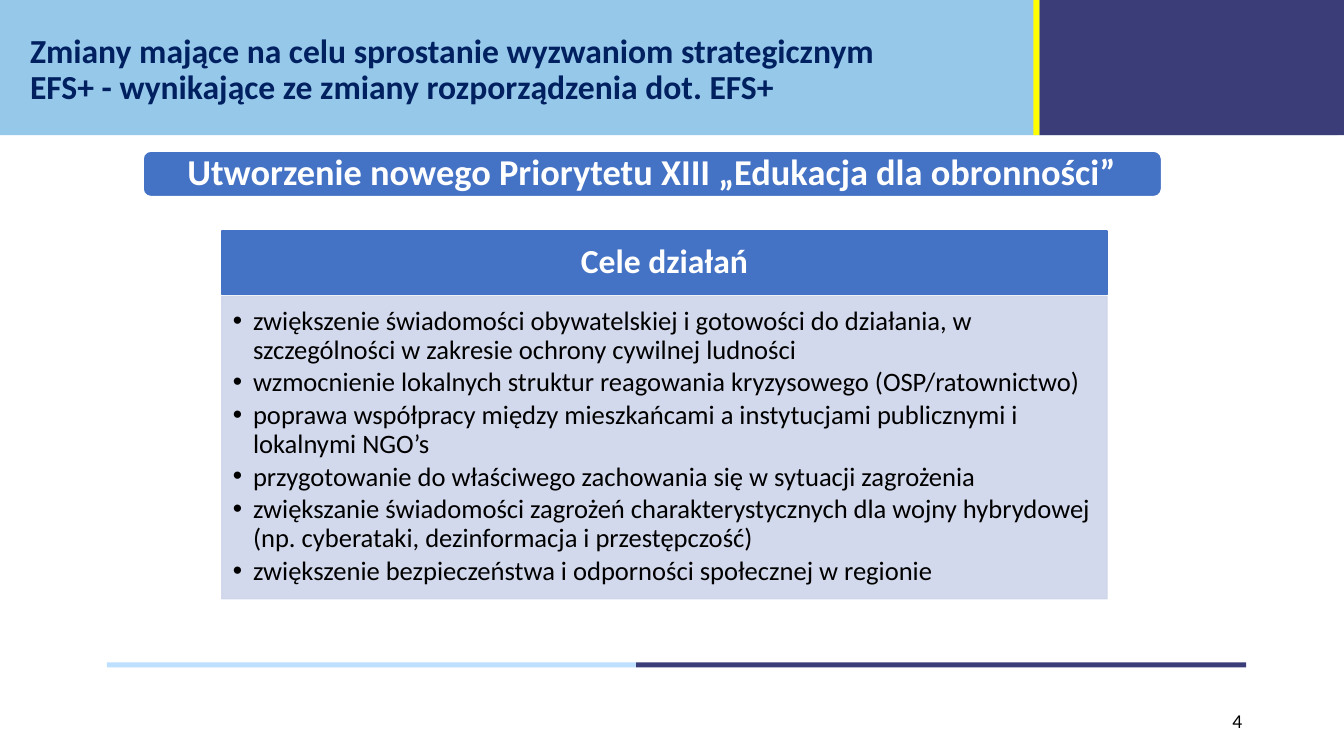
from lxml import etree
from pptx import Presentation
from pptx.dml.color import RGBColor
from pptx.enum.shapes import MSO_SHAPE
from pptx.enum.text import MSO_ANCHOR, PP_ALIGN
from pptx.oxml.ns import qn
from pptx.util import Pt

RECT, ROUND = MSO_SHAPE.RECTANGLE, MSO_SHAPE.ROUNDED_RECTANGLE
LEFT, MID, RIGHT = PP_ALIGN.LEFT, PP_ALIGN.CENTER, PP_ALIGN.RIGHT
TOP, CENTER = MSO_ANCHOR.TOP, MSO_ANCHOR.MIDDLE

SCALE = 9144  # EMU in one px, 100 px to the inch
COLORS = {
    "sky": "96C8EA", "navy": "3B3D79", "title": "002060", "pale": "BDE0FF",
    "yellow": "FFFF00", "blue": "4472C4", "panel": "CFD5EA",
    "white": "FFFFFF", "black": "000000",
}
TITLE = [
    "Zmiany mające na celu sprostanie wyzwaniom strategicznym",
    "EFS+ - wynikające ze zmiany rozporządzenia dot. EFS+",
]
GOALS = [
    "zwiększenie świadomości obywatelskiej i gotowości do działania, "
    "w szczególności w zakresie ochrony cywilnej ludności",
    "wzmocnienie lokalnych struktur reagowania kryzysowego (OSP/ratownictwo)",
    "poprawa współpracy między mieszkańcami a instytucjami publicznymi "
    "i lokalnymi NGO’s",
    "przygotowanie do właściwego zachowania się w sytuacji zagrożenia",
    "zwiększanie świadomości zagrożeń charakterystycznych dla wojny "
    "hybrydowej (np. cyberataki, dezinformacja i przestępczość)",
    "zwiększenie bezpieczeństwa i odporności społecznej w regionie",
]


def px(n):
    return n * SCALE


def rgb(name):
    return RGBColor.from_string(COLORS[name])


def fade(props, alpha):
    """Set the opacity of every colour in the shape properties, in percent."""
    for tone in props.iter(qn("a:srgbClr")):
        etree.SubElement(tone, qn("a:alpha"), val=str(alpha * 1000))


class Deck:
    def __init__(self, font):
        self.font = font
        self.prs = Presentation()
        self.prs.slide_width, self.prs.slide_height = px(1333), px(750)
        self.slide = self.prs.slides.add_slide(self.prs.slide_layouts[6])

    def block(self, x, y, w, h, fill, kind=RECT, line=None, alpha=None):
        shape = self.slide.shapes.add_shape(kind, px(x), px(y), px(w), px(h))
        shape.shadow.inherit = False
        shape.fill.solid()
        shape.fill.fore_color.rgb = rgb(fill)
        if line:
            shape.line.color.rgb = rgb(line)
            shape.line.width = Pt(1)
        else:
            shape.line.fill.background()
        if alpha:
            fade(shape.element.spPr, alpha)
        return shape

    def label(self, x, y, w, h, lines, **style):
        box = self.slide.shapes.add_textbox(px(x), px(y), px(w), px(h))
        self.text(box, lines, **style)

    def text(self, shape, lines, size, color="white", bold=False, align=LEFT,
             anchor=CENTER, inset=(10, 5, 10, 5), lead=0.9, after=0, hang=0):
        """Fill a shape with paragraphs; a hang in px makes them bullets."""
        frame = shape.text_frame
        frame.word_wrap = True
        frame.vertical_anchor = anchor
        (frame.margin_left, frame.margin_top,
         frame.margin_right, frame.margin_bottom) = map(px, inset)
        for i, line in enumerate(lines):
            para = frame.paragraphs[0] if i == 0 else frame.add_paragraph()
            para.alignment = align
            para.line_spacing = lead
            para.space_after = Pt(after)
            if hang:
                props = para._p.get_or_add_pPr()
                props.set("marL", str(px(hang)))
                props.set("indent", str(-px(hang)))
                etree.SubElement(props, qn("a:buFont"), typeface="Arial")
                etree.SubElement(props, qn("a:buChar"), char="•")
            run = para.add_run()
            run.text = line
            font = run.font
            font.name, font.size, font.bold = self.font, Pt(size), bold
            font.color.rgb = rgb(color)


def main():
    deck = Deck("Calibri")

    deck.block(0, -6, 1326, 140, "sky")
    deck.block(1031, -6, 302, 140, "navy")
    deck.label(20, 0, 1004, 140, TITLE, size=24, color="title", bold=True)
    deck.block(1025, -6, 6, 140, "yellow")

    deck.block(106, 657, 525, 5, "pale")
    deck.block(631, 657, 605, 5, "navy")
    deck.label(942, 695, 300, 40, ["4"], size=14, color="black",
               align=RIGHT, lead=1.0)

    topic = deck.block(142, 150, 1010, 45, "blue", ROUND, line="white")
    deck.text(topic, ["Utworzenie nowego Priorytetu XIII „Edukacja dla obronności”"],
              size=26, bold=True, align=MID, inset=(11, 11, 11, 11))

    head = deck.block(220, 229, 878, 63, "blue", line="blue")
    deck.text(head, ["Cele działań"], size=24, bold=True, align=MID,
              inset=(19, 11, 19, 11))
    body = deck.block(220, 294, 878, 300, "panel", line="panel", alpha=90)
    deck.text(body, GOALS, size=19, color="black", anchor=TOP,
              inset=(11, 11, 15, 17), after=2.85, hang=20)

    deck.prs.save("out.pptx")


if __name__ == "__main__":
    main()
